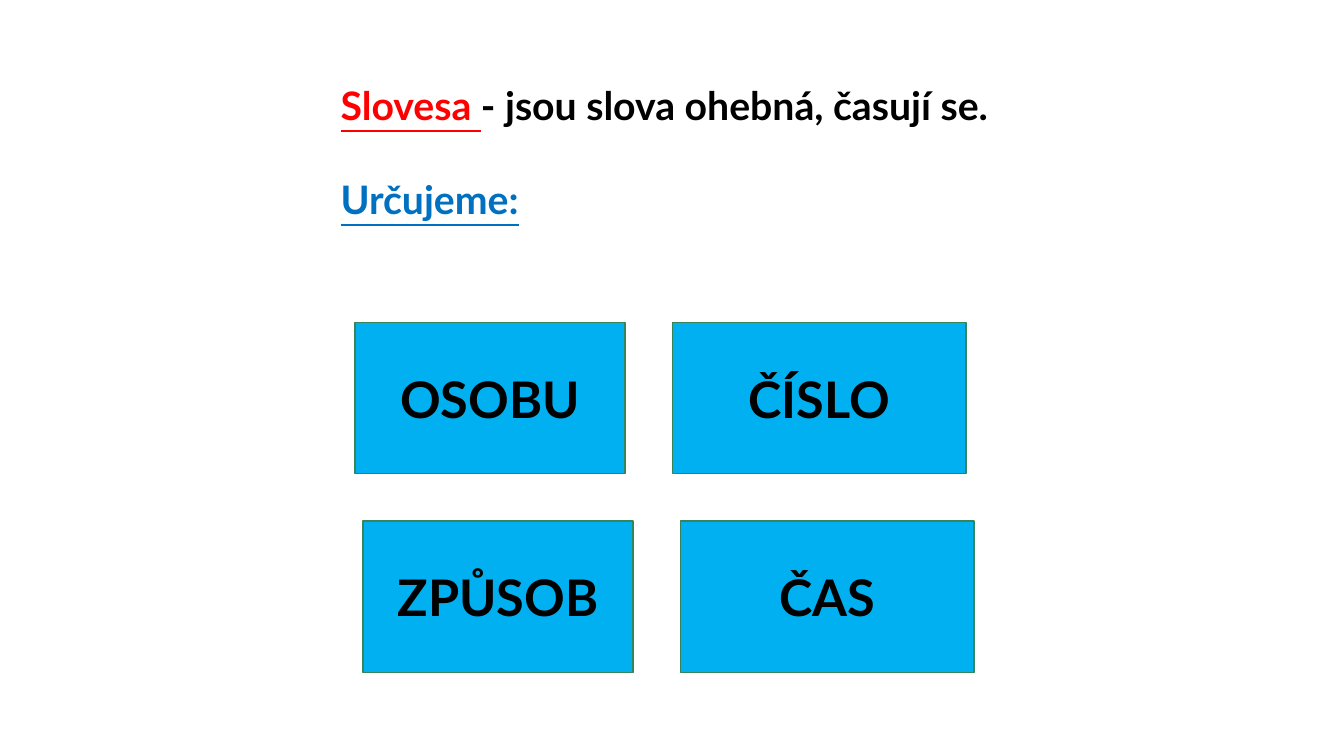
"""Builds a slide on Czech verbs and the four categories determined for them."""
from pptx import Presentation
from pptx.dml.color import RGBColor
from pptx.enum import shapes, text
from pptx.util import Inches, Pt

COLOURS = {"red": "FF0000", "black": "000000", "blue": "0070C0",
           "tile": "00B0F0", "edge": "35855A"}
INTRO = [
    [("Slovesa ", "red", True), ("- jsou slova ohebná, časují se.", "black", False)],
    [("Určujeme:", "blue", True)],
]
CATEGORIES = [["OSOBU", "ČÍSLO"], ["ZPŮSOB", "ČAS"]]
TILE_WIDTHS = [2.68, 2.91]
TILE_HEIGHT = 1.5
GRID_LEFT, GRID_TOP = 3.52, 3.2
COLUMN_STEP, ROW_STEP, ROW_SHIFT = 3.15, 1.97, 0.08


def colour(name):
    return RGBColor.from_string(COLOURS[name])


def add_span(para, words, size, ink="black", underline=False):
    span = para.add_run()
    span.text = words
    font = span.font
    font.name, font.size, font.bold = "Lato", Pt(size), True
    font.underline = underline
    font.color.rgb = colour(ink)


def add_intro(page):
    box = page.shapes.add_textbox(Inches(3.28), Inches(0.76), Inches(7.46), Inches(2.46))
    frame = box.text_frame
    frame.word_wrap = True
    for index, spans in enumerate(INTRO):
        para = frame.add_paragraph() if index else frame.paragraphs[0]
        para.space_before = Pt(33.6 * index)
        for words, ink, underline in spans:
            add_span(para, words, 28, ink=ink, underline=underline)


def add_tile(page, words, left, top, width):
    tile = page.shapes.add_shape(shapes.MSO_SHAPE.RECTANGLE, Inches(left), Inches(top),
                                 Inches(width), Inches(TILE_HEIGHT))
    tile.shadow.inherit = False
    tile.fill.solid()
    tile.fill.fore_color.rgb = colour("tile")
    tile.line.color.rgb = colour("edge")
    tile.line.width = Pt(1)
    frame = tile.text_frame
    frame.vertical_anchor = text.MSO_ANCHOR.MIDDLE
    para = frame.paragraphs[0]
    para.alignment = text.PP_ALIGN.CENTER
    add_span(para, words, 36)


def main():
    deck = Presentation()
    deck.slide_width, deck.slide_height = Inches(13.33), Inches(7.5)
    page = deck.slides.add_slide(deck.slide_layouts[6])
    add_intro(page)
    for row, names in enumerate(CATEGORIES):
        for column, name in enumerate(names):
            add_tile(page, name, GRID_LEFT + column * COLUMN_STEP + row * ROW_SHIFT,
                     GRID_TOP + row * ROW_STEP, TILE_WIDTHS[column])
    deck.save("out.pptx")


if __name__ == "__main__":
    main()
